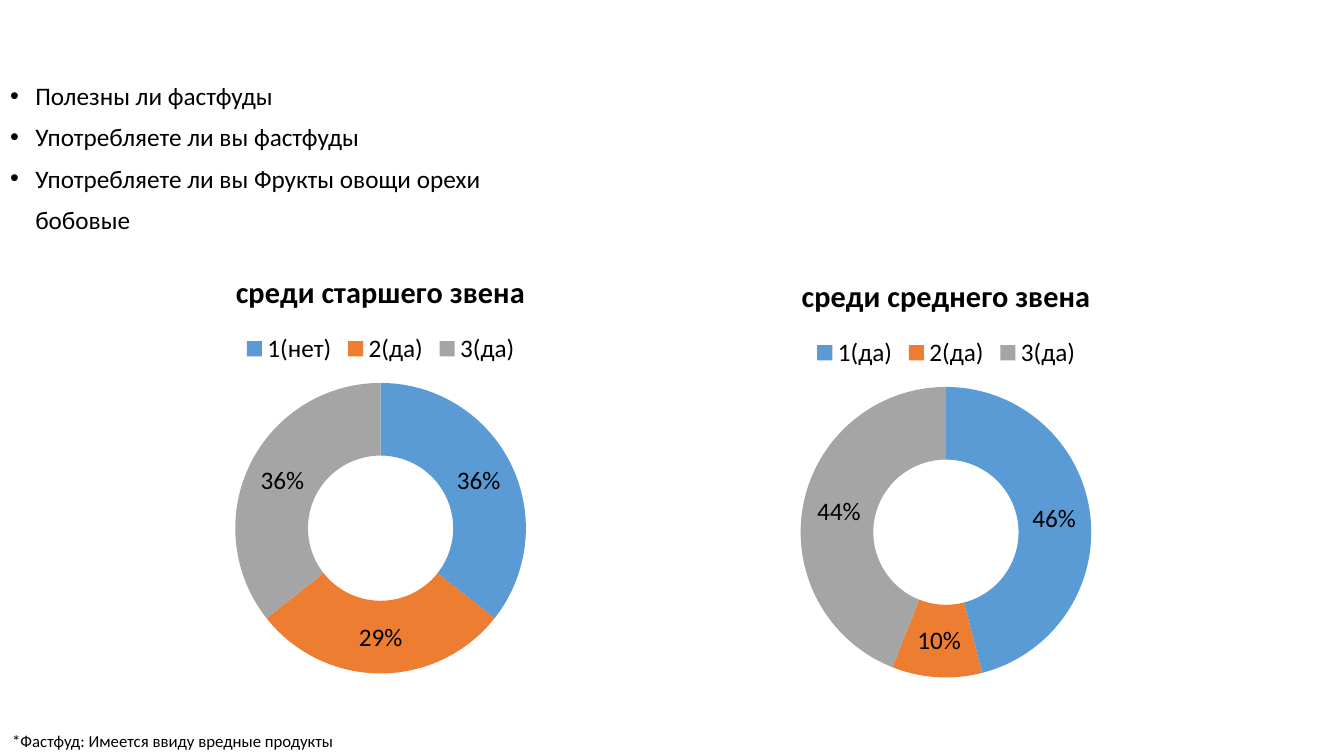
from dataclasses import dataclass

from lxml import etree
from pptx import Presentation
from pptx.chart.data import CategoryChartData
from pptx.dml.color import RGBColor
from pptx.enum.chart import XL_CHART_TYPE, XL_LEGEND_POSITION
from pptx.enum.text import MSO_AUTO_SIZE, PP_ALIGN
from pptx.oxml.ns import qn
from pptx.util import Inches, Pt

DOUGHNUT = XL_CHART_TYPE.DOUGHNUT
LEGEND_TOP = XL_LEGEND_POSITION.TOP

QUESTIONS = [
    "Полезны ли фастфуды",
    "Употребляете ли вы фастфуды",
    "Употребляете ли вы Фрукты овощи орехи бобовые",
]
SURVEYS = [
    {"title": "среди старшего звена", "left": 0.14, "top": 2.49,
     "answers": {"1(нет)": 36, "2(да)": 29, "3(да)": 36}},
    {"title": "среди среднего звена", "left": 5.75, "top": 2.53,
     "answers": {"1(да)": 46, "2(да)": 10, "3(да)": 44}},
]
CHART_SIZE = Inches(7.27), Inches(4.33)
FOOTNOTE = "*Фастфуд: Имеется ввиду вредные продукты"


@dataclass(frozen=True)
class Theme:
    font: str = "Calibri"
    text: str = "000000"
    answers: tuple = ("5B9BD5", "ED7D31", "A5A5A5")
    body_size: float = 18
    chart_title_size: float = 21.6
    footnote_size: float = 12


THEME = Theme()


def style_font(font, size, bold=False):
    font.name = THEME.font
    font.size = Pt(size)
    font.bold = bold
    font.color.rgb = RGBColor.from_string(THEME.text)


def set_bullet(paragraph):
    properties = paragraph._p.get_or_add_pPr()
    properties.set("marL", str(Inches(0.25)))
    properties.set("indent", str(-Inches(0.25)))
    etree.SubElement(properties, qn("a:buFont"), typeface="Arial")
    etree.SubElement(properties, qn("a:buChar"), char="•")


def fill_questions(body):
    body.left, body.top = Inches(0), Inches(0.78)
    body.width, body.height = Inches(5.67), Inches(4.76)
    frame = body.text_frame
    frame.auto_size = MSO_AUTO_SIZE.NONE
    frame.text = "\n".join(QUESTIONS)
    for paragraph in frame.paragraphs:
        paragraph.line_spacing = 0.9
        paragraph.space_before = Pt(10)
        style_font(paragraph.font, THEME.body_size)
    # The wrapped question keeps the same pitch between its own lines.
    paragraph.line_spacing = Pt(29.3)
    paragraph.space_before = Pt(0)
    for paragraph in frame.paragraphs:
        set_bullet(paragraph)


def add_survey(slide, survey):
    data = CategoryChartData()
    data.categories = list(survey["answers"])
    data.add_series("Series 1", list(survey["answers"].values()))
    chart = slide.shapes.add_chart(
        DOUGHNUT, Inches(survey["left"]), Inches(survey["top"]), *CHART_SIZE, data
    ).chart
    style_font(chart.font, THEME.body_size)

    chart.has_title = True
    title = chart.chart_title
    title.include_in_layout = False
    title.text_frame.text = survey["title"]
    style_font(title.text_frame.paragraphs[0].font, THEME.chart_title_size, bold=True)

    chart.has_legend = True
    chart.legend.position = LEGEND_TOP
    chart.legend.include_in_layout = False

    plot = chart.plots[0]
    plot.vary_by_categories = True
    plot.has_data_labels = True
    labels = plot.data_labels
    labels.show_percentage = True
    labels.show_value = False
    labels.number_format = "0%"
    labels.number_format_is_linked = False
    for index, color in enumerate(THEME.answers):
        point_format = plot.series[0].points[index].format
        point_format.fill.solid()
        point_format.fill.fore_color.rgb = RGBColor.from_string(color)
        point_format.line.fill.background()


def add_footnote(slide):
    box = slide.shapes.add_textbox(Inches(0), Inches(7.2), Inches(3.43), Inches(0.3))
    frame = box.text_frame
    frame.word_wrap = False
    frame.auto_size = MSO_AUTO_SIZE.SHAPE_TO_FIT_TEXT
    frame.text = FOOTNOTE
    paragraph = frame.paragraphs[0]
    paragraph.alignment = PP_ALIGN.CENTER
    style_font(paragraph.font, THEME.footnote_size)


def main():
    presentation = Presentation()
    presentation.slide_width = Inches(13.33)
    presentation.slide_height = Inches(7.5)
    slide = presentation.slides.add_slide(presentation.slide_layouts[1])
    title = slide.shapes.title._element
    title.getparent().remove(title)
    fill_questions(slide.placeholders[1])
    for survey in SURVEYS:
        add_survey(slide, survey)
    add_footnote(slide)
    presentation.save("out.pptx")


if __name__ == "__main__":
    main()
